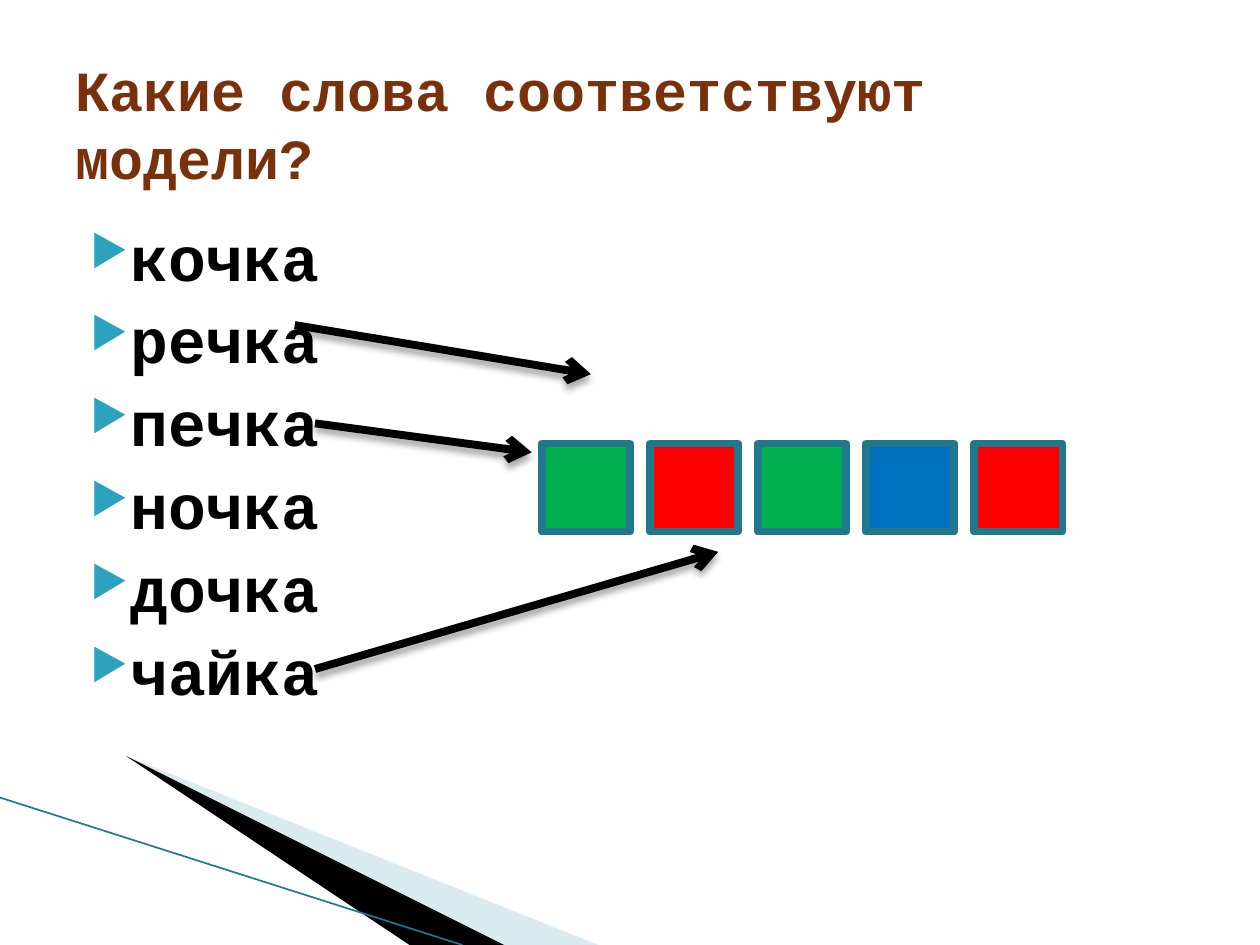
from lxml import etree
from pptx import Presentation
from pptx.dml.color import RGBColor
from pptx.enum import shapes, text
from pptx.oxml.ns import qn
from pptx.util import Inches, Pt

# Content
TITLE = "Какие слова соответствуют модели?"
WORDS = ["кочка", "речка", "печка", "ночка", "дочка", "чайка"]
GREEN, RED, BLUE = "00B050", "FF0000", "0070C0"
MODEL = [GREEN, RED, GREEN, BLUE, RED]
ARROWS = [((2.34, 2.58), (4.69, 2.97)),
          ((2.5, 3.36), (4.22, 3.59)),
          ((2.5, 5.31), (5.7, 4.38))]
WEDGES = [("A0CBDC", 40, [(0.55, 6.5), (5.92, 7.5), (4.56, 7.5)]),
          ("000000", 100, [(0.53, 6.49), (4.54, 7.5), (3.68, 7.5)])]
FONT, EDGE = "Courier New", "21788D"
SQUARE, PITCH, ROW_LEFT, ROW_TOP = 0.7, 0.858, 4.3, 3.52

prs = Presentation()
prs.slide_width, prs.slide_height = Inches(10), Inches(7.5)
s = prs.slides.add_slide(prs.slide_layouts[6])


def color(value):
    return RGBColor.from_string(value)


def add(parent, tag, **attrs):
    return etree.SubElement(parent, qn(tag), attrs)


def fill(sp, value):
    sp.shadow.inherit = False
    sp.fill.solid()
    sp.fill.fore_color.rgb = color(value)


def text_box(left, top, width, height, anchor):
    tf = s.shapes.add_textbox(*map(Inches, (left, top, width, height))).text_frame
    tf.word_wrap = True
    tf.vertical_anchor = anchor
    return tf


def write(p, words, size, value, leading):
    p.line_spacing = Pt(leading)
    r = p.add_run()
    r.text = words
    r.font.name, r.font.size, r.font.bold = FONT, Pt(size), True
    r.font.color.rgb = color(value)


def bullet(p):
    pPr = p._p.get_or_add_pPr()
    pPr.set("marL", str(Inches(0.4)))
    pPr.set("indent", str(Inches(-0.28)))
    add(add(pPr, "a:buClr"), "a:srgbClr", val="2DA2BF")
    add(pPr, "a:buSzPct", val="68000")
    add(pPr, "a:buChar", char="▶")


def line(start, end, value, width):
    c = s.shapes.add_connector(shapes.MSO_CONNECTOR.STRAIGHT,
                               *map(Inches, (*start, *end)))
    c.line.color.rgb = color(value)
    c.line.width = Pt(width)
    return c, add(c._element.spPr, "a:effectLst")


# Corner decoration
for value, alpha, points in WEDGES:
    builder = s.shapes.build_freeform(*points[0], scale=Inches(1))
    builder.add_line_segments(points[1:], close=True)
    sp = builder.convert_to_shape()
    fill(sp, value)
    sp.line.fill.background()
    if alpha < 100:
        clr = sp._element.spPr.find(qn("a:solidFill"))[0]
        add(clr, "a:alpha", val=str(alpha * 1000))
line((0, 6.33), (3.67, 7.5), EDGE, 0.95)

# Word list
tf = text_box(0.5, 1.68, 9, 4.89, text.MSO_ANCHOR.TOP)
for i, word in enumerate(WORDS):
    p = tf.add_paragraph() if i else tf.paragraphs[0]
    bullet(p)
    if i:
        p.space_before = Pt(4)
    write(p, word, 36, "000000", 43.3)

# Title
tf = text_box(0.5, 0.35, 9, 1.25, text.MSO_ANCHOR.MIDDLE)
write(tf.paragraphs[0], TITLE, 32.4, "78310B", 39)

# Sound model
for i, value in enumerate(MODEL):
    sp = s.shapes.add_shape(
        shapes.MSO_SHAPE.RECTANGLE, Inches(ROW_LEFT + i * PITCH),
        Inches(ROW_TOP), Inches(SQUARE), Inches(SQUARE))
    fill(sp, value)
    sp.line.color.rgb = color(EDGE)
    sp.line.width = Pt(4.33)

# Arrows from the matching words
for start, end in ARROWS:
    c, effects = line(start, end, "000000", 4.5)
    add(c.line._get_or_add_ln(), "a:tailEnd", type="arrow")
    shadow = add(effects, "a:outerShdw", blurRad=str(Pt(4)), dist=str(Pt(3)),
                 dir="5400000", rotWithShape="0")
    add(add(shadow, "a:srgbClr", val="000000"), "a:alpha", val="35000")

prs.save("out.pptx")
